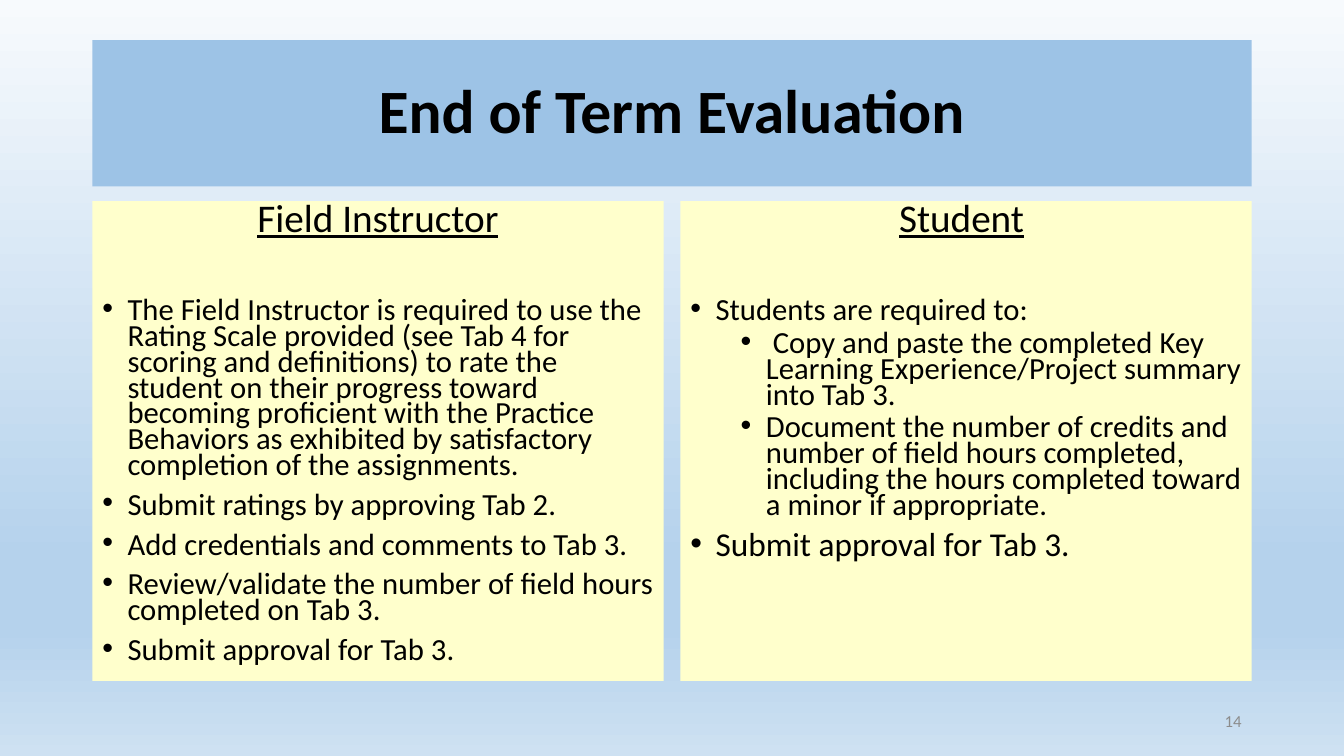
import copy

import pptx
import pptx.dml.color
import pptx.enum.shapes
import pptx.enum.text
import pptx.oxml
import pptx.oxml.ns
import pptx.util

Pt = pptx.util.Pt
RGBColor = pptx.dml.color.RGBColor
ALIGN = pptx.enum.text.PP_ALIGN
ANCHOR = pptx.enum.text.MSO_ANCHOR

BLACK = RGBColor(0x00, 0x00, 0x00)
GREY = RGBColor(0x8C, 0x8C, 0x8C)
BLUE = RGBColor(0x9D, 0xC3, 0xE6)
CREAM = RGBColor(0xFF, 0xFF, 0xCC)
SKY = [
    (0, RGBColor(0xF7, 0xFA, 0xFD)),
    (0.74, RGBColor(0xB5, 0xD2, 0xEC)),
    (0.83, RGBColor(0xB5, 0xD2, 0xEC)),
    (1, RGBColor(0xCE, 0xE1, 0xF2)),
]

MARGIN = 66
PANEL_WIDTH = 408
PANEL_STEP = 420
BODY_SIZE = 21.9

PANELS = [
    ("Field Instructor", "", [
        (0, BODY_SIZE, "The Field Instructor is required to use the Rating Scale provided "
         "(see Tab 4 for scoring and definitions) to rate the student on their progress "
         "toward becoming proficient with the Practice Behaviors as exhibited by "
         "satisfactory completion of the assignments."),
        (0, BODY_SIZE, "Submit ratings by approving Tab 2."),
        (0, BODY_SIZE, "Add credentials and comments to Tab 3."),
        (0, BODY_SIZE, "Review/validate the number of field hours completed on Tab 3."),
        (0, BODY_SIZE, "Submit approval for Tab 3."),
    ]),
    ("Student", " ", [
        (0, BODY_SIZE, "Students are required to:"),
        (1, BODY_SIZE, " Copy and paste the completed Key Learning Experience/Project "
         "summary into Tab 3."),
        (1, BODY_SIZE, "Document the number of credits and number of field hours completed, "
         "including the hours completed toward a minor if appropriate."),
        (0, 23.8, "Submit approval for Tab 3."),
    ]),
]


class SlideBuilder:
    font_name = "Calibri"

    def __init__(self, page):
        self.page = page

    def background(self, stops):
        fill = self.page.background.fill
        fill.gradient()
        fill.gradient_angle = 270
        stop_list = fill.gradient_stops[0]._gs.getparent()
        while len(stop_list) < len(stops):
            stop_list.append(copy.deepcopy(stop_list[0]))
        for stop, (position, color) in zip(fill.gradient_stops, stops):
            stop.position = position
            stop.color.rgb = color

    def style(self, para, size, color=BLACK, align=ALIGN.LEFT, spacing=1, before=0):
        para.alignment = align
        para.line_spacing = spacing
        para.space_before = Pt(before)
        para.font.name = self.font_name
        para.font.size = Pt(size)
        para.font.color.rgb = color

    def title(self, text, left, top, width, height):
        box = self.page.shapes.title
        box.left, box.top, box.width, box.height = map(Pt, (left, top, width, height))
        box.fill.solid()
        box.fill.fore_color.rgb = BLUE
        box.text_frame.text = text
        box.text_frame.vertical_anchor = ANCHOR.MIDDLE
        para = box.text_frame.paragraphs[0]
        self.style(para, 44, align=ALIGN.CENTER, spacing=0.9)
        para.font.bold = True

    def panel(self, heading, tail, items, left, top, width, height):
        box = self.page.shapes.add_shape(
            pptx.enum.shapes.MSO_SHAPE.RECTANGLE, *map(Pt, (left, top, width, height)))
        box.shadow.inherit = False
        box.fill.solid()
        box.fill.fore_color.rgb = CREAM
        box.line.fill.background()
        frame = box.text_frame
        frame.word_wrap = True
        frame.vertical_anchor = ANCHOR.TOP
        self.heading(frame.paragraphs[0], heading, tail)
        for level, size, text in items:
            self.bullet(frame.add_paragraph(), level, size, text)

    def heading(self, para, text, tail):
        self.style(para, 28, align=ALIGN.CENTER, spacing=0.7, before=10)
        span = para.add_run()
        span.text = text
        span.font.underline = True
        if tail:
            para.add_run().text = tail
        para.add_line_break()
        ending = pptx.oxml.parse_xml(
            f'<a:endParaRPr {pptx.oxml.ns.nsdecls("a")} sz="2800"/>')
        para._p.append(ending)

    def bullet(self, para, level, size, text):
        para.text = text
        para.level = level
        self.style(para, size, spacing=0.7, before=5 if level else 10)
        properties = para._p.get_or_add_pPr()
        properties.set("marL", str(Pt(18 + 36 * level)))
        properties.set("indent", str(-Pt(18)))
        namespace = pptx.oxml.ns.nsdecls("a")
        defaults = properties.find(pptx.oxml.ns.qn("a:defRPr"))
        defaults.addprevious(pptx.oxml.parse_xml(f'<a:buFont {namespace} typeface="Arial"/>'))
        defaults.addprevious(pptx.oxml.parse_xml(f'<a:buChar {namespace} char="•"/>'))

    def page_number(self, text, left, top, width, height):
        box = self.page.shapes.add_textbox(*map(Pt, (left, top, width, height)))
        frame = box.text_frame
        frame.word_wrap = True
        frame.vertical_anchor = ANCHOR.MIDDLE
        frame.text = text
        self.style(frame.paragraphs[0], 12, GREY, ALIGN.RIGHT)


def main():
    deck = pptx.Presentation()
    deck.slide_width, deck.slide_height = Pt(960), Pt(540)
    builder = SlideBuilder(deck.slides.add_slide(deck.slide_layouts[5]))
    builder.background(SKY)
    builder.title("End of Term Evaluation", MARGIN, 28.75, PANEL_STEP + PANEL_WIDTH, 104.38)
    for index, (heading, tail, items) in enumerate(PANELS):
        builder.panel(heading, tail, items,
                      MARGIN + index * PANEL_STEP, 143.75, PANEL_WIDTH, 342.6)
    builder.page_number("14", 678, 500.5, 216, 28.75)
    deck.save("out.pptx")


if __name__ == "__main__":
    main()
